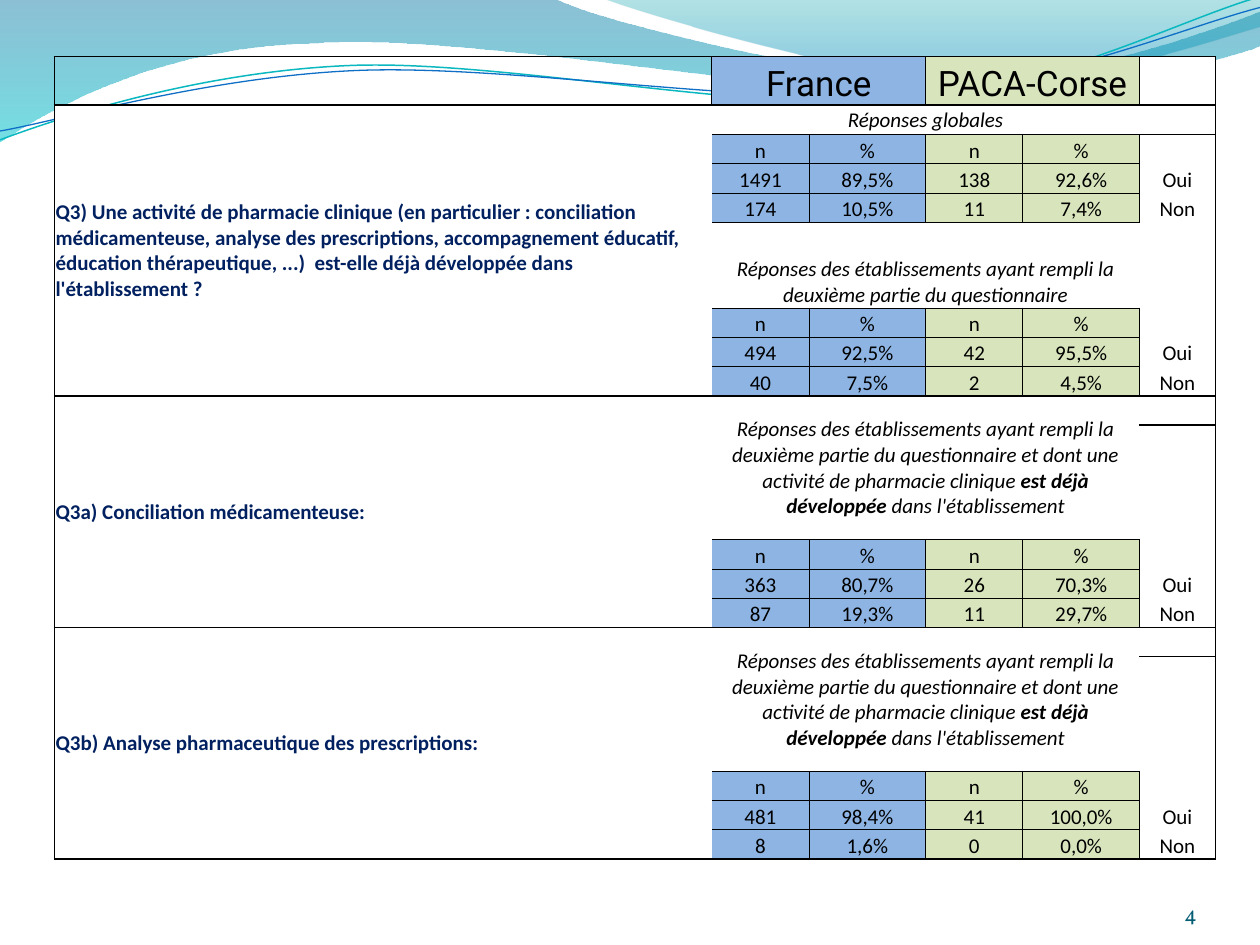
from dataclasses import dataclass
from itertools import islice
from math import cos, radians, sin

from lxml.etree import SubElement
from pptx import Presentation
from pptx.dml.color import RGBColor
from pptx.enum.text import MSO_ANCHOR, PP_ALIGN
from pptx.oxml.ns import qn
from pptx.util import Cm, Pt

BLACK = RGBColor(0x00, 0x00, 0x00)
WHITE = RGBColor(0xFF, 0xFF, 0xFF)
NAVY = RGBColor(0x00, 0x20, 0x60)
FRANCE_BLUE = RGBColor(0x8D, 0xB4, 0xE3)
REGION_GREEN = RGBColor(0xD7, 0xE4, 0xBC)
PAGE_TEAL = RGBColor(0x04, 0x5D, 0x75)
LINE_TEAL = RGBColor(0x0A, 0xB8, 0xBF)
LINE_BLUE = RGBColor(0x0F, 0x6F, 0xC6)

INCH = 2.54  # wave coordinates are in inches
LINE_TILT = -2.7
THIN, THICK = 0.5, 1
ROW_HEIGHT = 0.59
COLUMN_WIDTHS = (13.25, 1.96, 2.35, 1.96, 2.35, 1.53)
COLUMN_FILLS = (FRANCE_BLUE, FRANCE_BLUE, REGION_GREEN, REGION_GREEN, WHITE)
NO_STYLE = "{2D5ABB26-0587-4C30-8999-92F81FD0307C}"


@dataclass
class Wave:
    start: tuple
    segments: list  # one point is a straight line, three points are a curve
    stops: tuple = ()  # colour, position in %, opacity in %
    line: RGBColor | None = None
    width: float = 0
    center: tuple = (0, 0)
    tilt: float = 0


@dataclass
class Group:
    caption: tuple  # plain and bold runs in turn
    caption_heights: tuple
    yes: tuple
    no: tuple


@dataclass
class Section:
    question: str
    groups: list


WAVES = [
    Wave((0, 0),
         [[(4.4, -0.01)], [(4.76, 0.17), (6.64, 0.63), (7.58, 0.63)],
          [(8.53, 0.63), (9.58, 0.26), (10, 0.09)], [(10.01, 0.36)],
          [(9.83, 0.44), (8.7, 0.76), (7.46, 0.75)],
          [(6.22, 0.75), (3.82, 0.28), (2.57, 0.34)],
          [(1.29, 0.36), (0.46, 0.83), (-0.01, 1.13)], [(0, 0)]],
         stops=((RGBColor(0x00, 0x74, 0xA1), 0, 45), (RGBColor(0x00, 0xC6, 0xCF), 100, 55))),
    Wave((4.79, -0.01),
         [[(5.09, 0.11), (6.82, 0.62), (7.69, 0.65)],
          [(8.56, 0.69), (9.61, 0.32), (10, 0.21)], [(10, 0)], [(4.79, -0.01)]],
         stops=((RGBColor(0x00, 0xA1, 0xA9), 0, 30), (RGBColor(0x00, 0x8B, 0xBF), 80, 45))),
    Wave((0, 1.11),
         [[(0.48, 0.93), (1.58, 0.57), (2.77, 0.52)],
          [(3.95, 0.47), (5.93, 0.89), (7.13, 0.8)],
          [(8.33, 0.71), (9.38, 0.15), (9.98, -0.02)]],
         line=LINE_TEAL, width=0.85, center=(4.99, 0.58), tilt=LINE_TILT),
    Wave((0, 1.04),
         [[(0.47, 0.96), (1.64, 0.61), (2.83, 0.56)],
          [(4.03, 0.51), (5.97, 0.84), (7.17, 0.75)],
          [(8.36, 0.67), (9.41, 0.21), (10, 0.06)]],
         line=LINE_BLUE, width=0.75, center=(5, 0.59), tilt=LINE_TILT),
]

SECOND_PART = "Réponses des établissements ayant rempli la deuxième partie du questionnaire"
DEVELOPED = (SECOND_PART + " et dont une activité de pharmacie clinique ",
             "est déjà développée", " dans l'établissement")
TALL_CAPTION = (ROW_HEIGHT, ROW_HEIGHT, 1.72)
SECTIONS = [
    Section("Q3) Une activité de pharmacie clinique (en particulier : conciliation médicamenteuse, "
            "analyse des prescriptions, accompagnement éducatif, éducation thérapeutique, ...)  "
            "est-elle déjà développée dans l'établissement ?",
            [Group(("Réponses globales",), (ROW_HEIGHT,),
                   ("1491", "89,5%", "138", "92,6%"), ("174", "10,5%", "11", "7,4%")),
             Group((SECOND_PART,), (ROW_HEIGHT, 1.14),
                   ("494", "92,5%", "42", "95,5%"), ("40", "7,5%", "2", "4,5%"))]),
    Section("Q3a) Conciliation médicamenteuse:",
            [Group(DEVELOPED, TALL_CAPTION,
                   ("363", "80,7%", "26", "70,3%"), ("87", "19,3%", "11", "29,7%"))]),
    Section("Q3b) Analyse pharmaceutique des prescriptions:",
            [Group(DEVELOPED, TALL_CAPTION,
                   ("481", "98,4%", "41", "100,0%"), ("8", "1,6%", "0", "0,0%"))]),
]


def level_point(point: tuple, wave: Wave) -> tuple:
    """Turn a point back by the tilt of its wave, in slide units."""
    angle = radians(-wave.tilt)
    (x, y), (center_x, center_y) = point, wave.center
    x, y = x - center_x, y - center_y
    return (Cm((center_x + x * cos(angle) - y * sin(angle)) * INCH),
            Cm((center_y + x * sin(angle) + y * cos(angle)) * INCH))


def draw_wave(slide, wave: Wave) -> None:
    points = [wave.start, *(point for segment in wave.segments for point in segment)]
    vertices = [level_point(point, wave) for point in points]
    builder = slide.shapes.build_freeform(*vertices[0])
    builder.add_line_segments(vertices[1:], close=bool(wave.stops))
    shape = builder.convert_to_shape()
    shape.shadow.inherit = False
    shape.rotation = wave.tilt

    # Join each three control points into a curve
    outline = next(shape._element.iter(qn("a:path")))
    lines = iter(outline.findall(qn("a:lnTo")))
    for segment in wave.segments:
        controls = list(islice(lines, len(segment)))
        if len(controls) == 3:
            curve = outline.makeelement(qn("a:cubicBezTo"))
            controls[0].addprevious(curve)
            for control in controls:
                curve.append(control[0])
                outline.remove(control)

    if wave.line is not None:
        shape.fill.background()
        shape.line.color.rgb = wave.line
        shape.line.width = Pt(wave.width)
        return
    shape.line.fill.background()
    shape.fill.gradient()
    shape.fill.gradient_angle = 270
    elements = shape._element.iter(qn("a:gs"))
    for stop, element, (color, position, opacity) in zip(shape.fill.gradient_stops, elements, wave.stops):
        stop.color.rgb = color
        element.set("pos", str(position * 1000))
        SubElement(element[0], qn("a:alpha"), val=str(opacity * 1000))


def write_text(frame, *runs: str, size: float = 12, font: str = "Calibri", color=BLACK,
               bold: bool = False, italic: bool = False, align=PP_ALIGN.CENTER) -> None:
    """Write one paragraph; every second run changes its weight."""
    paragraph = frame.paragraphs[0]
    paragraph.alignment = align
    for index, text in enumerate(runs):
        run = paragraph.add_run()
        run.text = text
        run.font.size, run.font.name, run.font.color.rgb = Pt(size), font, color
        run.font.bold, run.font.italic = bold ^ (index % 2 == 1), italic


def set_borders(cell, widths: dict) -> None:
    properties = cell._tc.get_or_add_tcPr()
    for side in "LRTB":
        if widths.get(side):
            line = SubElement(properties, qn(f"a:ln{side}"), w=str(Pt(widths[side])))
            SubElement(SubElement(line, qn("a:solidFill")), qn("a:srgbClr"), val=str(BLACK))


def fill_cells(table, row: int, column: int, *runs: str, rows: int = 1, columns: int = 1,
               fill=WHITE, anchor=MSO_ANCHOR.BOTTOM, borders: dict, **text_format) -> None:
    """Format a block of cells as one cell, with borders on its outer edges."""
    bottom, right = row + rows - 1, column + columns - 1
    for r in range(row, bottom + 1):
        for c in range(column, right + 1):
            cell, is_first = table.cell(r, c), (r, c) == (row, column)
            edges = {"L": c == column, "R": c == right, "T": r == row, "B": r == bottom}
            set_borders(cell, {side: width for side, width in borders.items() if is_first or edges[side]})
            cell.margin_left = cell.margin_right = cell.margin_top = Cm(0.02)
            cell.margin_bottom = 0
            cell.vertical_anchor = anchor
            if fill is not None:
                cell.fill.solid()
                cell.fill.fore_color.rgb = fill
            if not (runs and is_first):
                SubElement(cell.text_frame.paragraphs[0]._p, qn("a:endParaRPr"), sz="1000")
    first = table.cell(row, column)
    if rows * columns > 1:
        first.merge(table.cell(bottom, right))
    if runs:
        write_text(first.text_frame, *runs, **text_format)


def draw_group(table, row: int, group: Group, first: bool, last: bool) -> int:
    """Draw a caption and its three rows of figures; return the next free row."""
    top, height = (THICK if first else THIN), len(group.caption_heights)
    anchor = MSO_ANCHOR.MIDDLE if first else MSO_ANCHOR.BOTTOM
    fill_cells(table, row, 1, *group.caption, rows=height, columns=4, anchor=anchor,
               borders={"T": top, "B": THIN}, italic=True)
    for offset in range(height):
        fill_cells(table, row + offset, 5,
                   borders={"R": THICK, "T": THICK if first and offset == 0 else 0})
    row += height
    lines = (("n", "%", "n", "%", ""), (*group.yes, "Oui"), (*group.no, "Non"))
    for offset, line in enumerate(lines):
        bottom = THICK if last and offset == 2 else THIN
        for column, (text, fill) in enumerate(zip(line, COLUMN_FILLS), start=1):
            borders = {"L": THIN if column > 1 else 0, "R": THIN, "T": THIN, "B": bottom}
            if column == 5:
                borders = {"L": THIN, "R": THICK, "B": bottom if bottom == THICK else 0}
            fill_cells(table, row + offset, column, *filter(None, [text]), fill=fill, borders=borders)
    return row + len(lines)


def draw_table(slide) -> None:
    heights = [0.98]
    for section in SECTIONS:
        for group in section.groups:
            heights += [*group.caption_heights, *[ROW_HEIGHT] * 3]
    table = slide.shapes.add_table(len(heights), len(COLUMN_WIDTHS), Cm(1.1), Cm(1.14),
                                   Cm(sum(COLUMN_WIDTHS)), Cm(sum(heights))).table
    table.first_row = table.horz_banding = False
    table._tbl.tblPr.find(qn("a:tableStyleId")).text = NO_STYLE
    for column, width in zip(table.columns, COLUMN_WIDTHS):
        column.width = Cm(width)
    for row, height in zip(table.rows, heights):
        row.height = Cm(height)

    # Header row
    edges = {"L": THIN, "R": THIN, "T": THICK, "B": THICK}
    fill_cells(table, 0, 0, fill=None, borders={**edges, "L": THICK})
    for column, text, fill in ((1, "France", FRANCE_BLUE), (3, "PACA-Corse", REGION_GREEN)):
        fill_cells(table, 0, column, text, columns=2, fill=fill, borders=edges, size=20, font="Roboto")
    fill_cells(table, 0, 5, borders={**edges, "R": THICK})

    # Questions with their groups of answers
    row = 1
    for section in SECTIONS:
        start = row
        for group in section.groups:
            row = draw_group(table, row, group, group is section.groups[0], group is section.groups[-1])
        fill_cells(table, start, 0, section.question, rows=row - start, anchor=MSO_ANCHOR.MIDDLE,
                   borders={"L": THICK, "T": THICK, "B": THICK}, color=NAVY, bold=True, align=PP_ALIGN.LEFT)


def main() -> None:
    presentation = Presentation()
    presentation.slide_width, presentation.slide_height = Cm(25.4), Cm(19.05)
    slide = presentation.slides.add_slide(presentation.slide_layouts[6])
    for wave in WAVES:
        draw_wave(slide, wave)
    draw_table(slide)

    # Page number
    frame = slide.shapes.add_textbox(Cm(22.02), Cm(17.65), Cm(2.11), Cm(1.02)).text_frame
    frame.word_wrap = True
    frame.vertical_anchor = MSO_ANCHOR.BOTTOM
    frame.margin_left = frame.margin_right = frame.margin_top = frame.margin_bottom = 0
    write_text(frame, "4", font="Vollkorn", color=PAGE_TEAL, align=PP_ALIGN.RIGHT)
    presentation.save("out.pptx")


if __name__ == "__main__":
    main()
